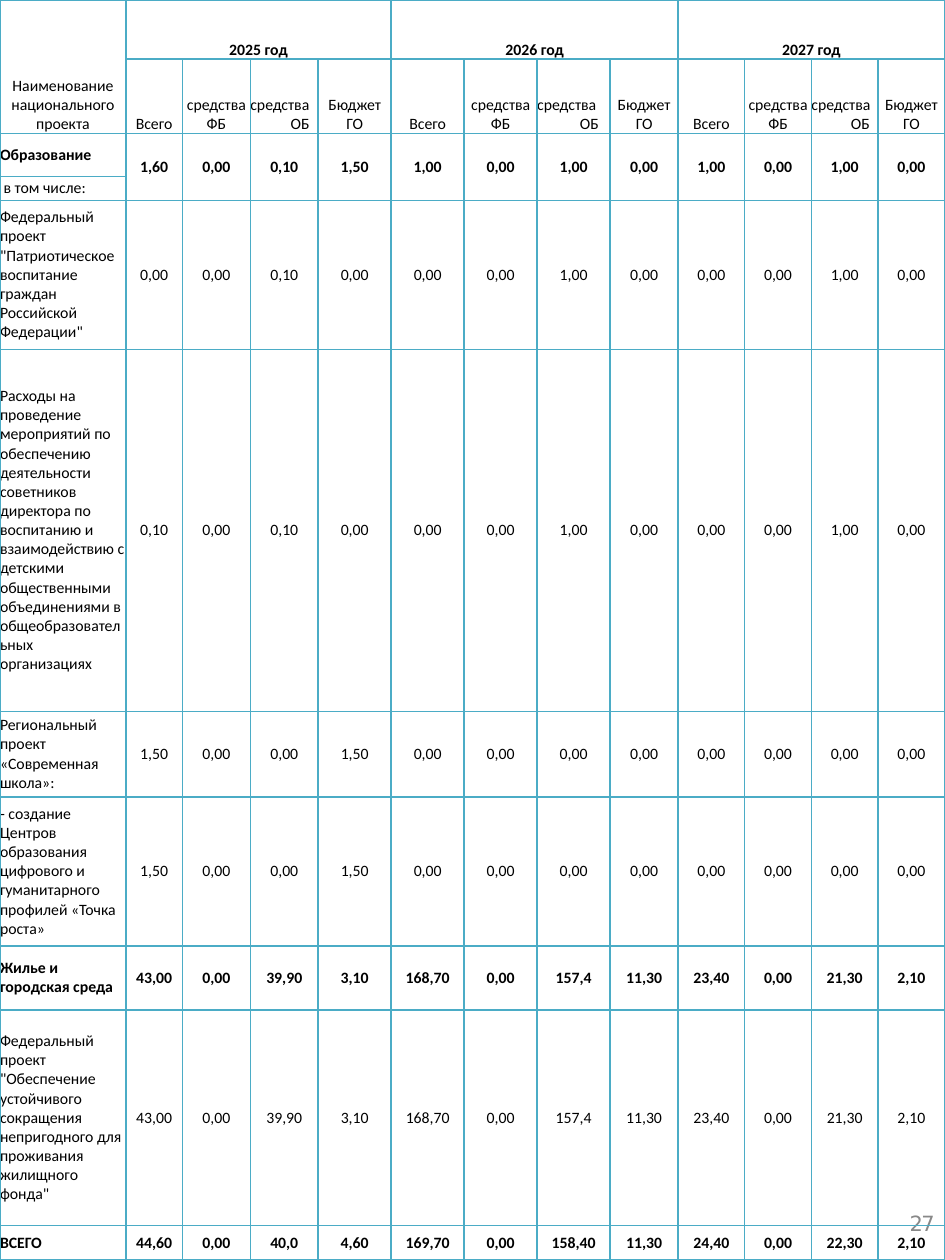
from dataclasses import dataclass

from lxml import etree
from pptx import Presentation
from pptx.dml.color import RGBColor
from pptx.enum.text import MSO_ANCHOR, PP_ALIGN
from pptx.oxml import ns
from pptx.util import Inches, Pt


@dataclass(frozen=True)
class Theme:
    ink: str = "000000"
    grey: str = "888888"
    rule: str = "4BACC6"
    font: str = "Calibri"
    page_font: str = "DejaVu Sans"
    body: float = 9
    page: float = 12


T = Theme()
MID, LEFT = PP_ALIGN.CENTER, PP_ALIGN.LEFT

COLS = [1, 0.45, 0.54, 0.54, 0.58, 0.58, 0.58, 0.58, 0.54, 0.53, 0.53, 0.53, 0.53]
ROWS = [0.47, 0.59, 0.34, 0.19, 1.18, 2.87, 0.68, 1.18, 0.51, 1.71, 0.27]
YEARS = ["2025 год", "2026 год", "2027 год"]

# First table row, label, bold, values
DATA = [
    (2, "Образование", True,
     "1,60 0,00 0,10 1,50 1,00 0,00 1,00 0,00 1,00 0,00 1,00 0,00"),
    (3, " в том числе:", False, ""),
    (4, 'Федеральный проект "Патриотическое воспитание граждан Российской Федерации"', False,
     "0,00 0,00 0,10 0,00 0,00 0,00 1,00 0,00 0,00 0,00 1,00 0,00"),
    (5, "Расходы на проведение мероприятий по обеспечению деятельности советников директора "
        "по воспитанию и взаимодействию с детскими общественными объединениями "
        "в общеобразовательных организациях", False,
     "0,10 0,00 0,10 0,00 0,00 0,00 1,00 0,00 0,00 0,00 1,00 0,00"),
    (6, "Региональный проект «Современная школа»:", False,
     "1,50 0,00 0,00 1,50 0,00 0,00 0,00 0,00 0,00 0,00 0,00 0,00"),
    (7, "- создание Центров образования цифрового и гуманитарного профилей «Точка роста»", False,
     "1,50 0,00 0,00 1,50 0,00 0,00 0,00 0,00 0,00 0,00 0,00 0,00"),
    (8, "Жилье и городская среда", True,
     "43,00 0,00 39,90 3,10 168,70 0,00 157,4 11,30 23,40 0,00 21,30 2,10"),
    (9, 'Федеральный проект "Обеспечение устойчивого сокращения непригодного для проживания '
        'жилищного фонда"', False,
     "43,00 0,00 39,90 3,10 168,70 0,00 157,4 11,30 23,40 0,00 21,30 2,10"),
    (10, "ВСЕГО", True,
     "44,60 0,00 40,0 4,60 169,70 0,00 158,40 11,30 24,40 0,00 22,30 2,10"),
]


def add_run(para, words, size, font, color, bold=False):
    run = para.add_run()
    run.text = words
    run.font.size, run.font.name, run.font.bold = Pt(size), font, bold
    run.font.color.rgb = RGBColor.from_string(color)
    return run


def set_cell(cell, lines, align=MID, bold=False):
    frame = cell.text_frame
    for i, line in enumerate(lines):
        para = frame.add_paragraph() if i else frame.paragraphs[0]
        para.alignment = align
        add_run(para, line, T.body, T.font, T.ink, bold)


def style_cell(cell, anchor):
    cell.margin_left = cell.margin_right = cell.margin_top = cell.margin_bottom = 0
    cell.vertical_anchor = anchor
    props = cell._tc.get_or_add_tcPr()
    for side in ("lnL", "lnR", "lnT", "lnB"):
        line = etree.SubElement(props, ns.qn("a:" + side), w=str(Pt(1)))
        fill = etree.SubElement(line, ns.qn("a:solidFill"))
        etree.SubElement(fill, ns.qn("a:srgbClr"), val=T.rule)
    cell.fill.background()


def fill_head(table):
    table.cell(0, 0).merge(table.cell(1, 0))
    set_cell(table.cell(0, 0), ["Наименование национального проекта"])
    for i, year in enumerate(YEARS):
        col = 1 + 4 * i
        table.cell(0, col).merge(table.cell(0, col + 3))
        set_cell(table.cell(0, col), [year], bold=True)
        budget = ["Бюджет ГО"] if year == YEARS[-1] else ["Бюджет", "ГО"]
        set_cell(table.cell(1, col), ["Всего"])
        set_cell(table.cell(1, col + 1), ["средства ФБ"])
        region = table.cell(1, col + 2)
        set_cell(region, ["средства", "ОБ"])
        first, second = region.text_frame.paragraphs
        first.alignment = LEFT
        second._p.get_or_add_pPr().set("marL", str(Inches(0.25)))
        set_cell(table.cell(1, col + 3), budget)


def fill_body(table):
    for row, label, bold, values in DATA:
        set_cell(table.cell(row, 0), [label], LEFT, bold)
        for col, value in enumerate(values.split(), 1):
            if row == 2:
                table.cell(row, col).merge(table.cell(row + 1, col))
            set_cell(table.cell(row, col), [value], bold=bold)


def add_budget(slide, x, y, w, h):
    table = slide.shapes.add_table(
        len(ROWS), len(COLS), Inches(x), Inches(y), Inches(w), Inches(h)).table
    table.first_row = table.horz_banding = False
    for col, size in zip(table.columns, COLS):
        col.width = Inches(size * w / sum(COLS))
    for row, size in zip(table.rows, ROWS):
        row.height = Inches(size * h / sum(ROWS))
    for r in range(len(ROWS)):
        for c in range(len(COLS)):
            style_cell(table.cell(r, c), MSO_ANCHOR.BOTTOM if r < 2 else MSO_ANCHOR.MIDDLE)
    fill_head(table)
    fill_body(table)


def add_page(slide, x, y, w, h):
    frame = slide.shapes.add_textbox(Inches(x), Inches(y), Inches(w), Inches(h)).text_frame
    frame.margin_left = frame.margin_right = frame.margin_top = frame.margin_bottom = 0
    frame.word_wrap = True
    para = frame.paragraphs[0]
    para.space_before = Pt(1.6)
    para._p.get_or_add_pPr().set("marL", str(Inches(0.06)))
    run = add_run(para, "27", T.page, T.page_font, T.grey)
    run._r.get_or_add_rPr().set("spc", "-100")


def main():
    deck = Presentation()
    deck.slide_width, deck.slide_height = Inches(7.5), Inches(10)
    slide = deck.slides.add_slide(deck.slide_layouts[6])
    add_page(slide, 7.16, 9.61, 0.31, 0.25)
    add_budget(slide, 0, 0, 7.5, 10)
    deck.save("out.pptx")


if __name__ == "__main__":
    main()
